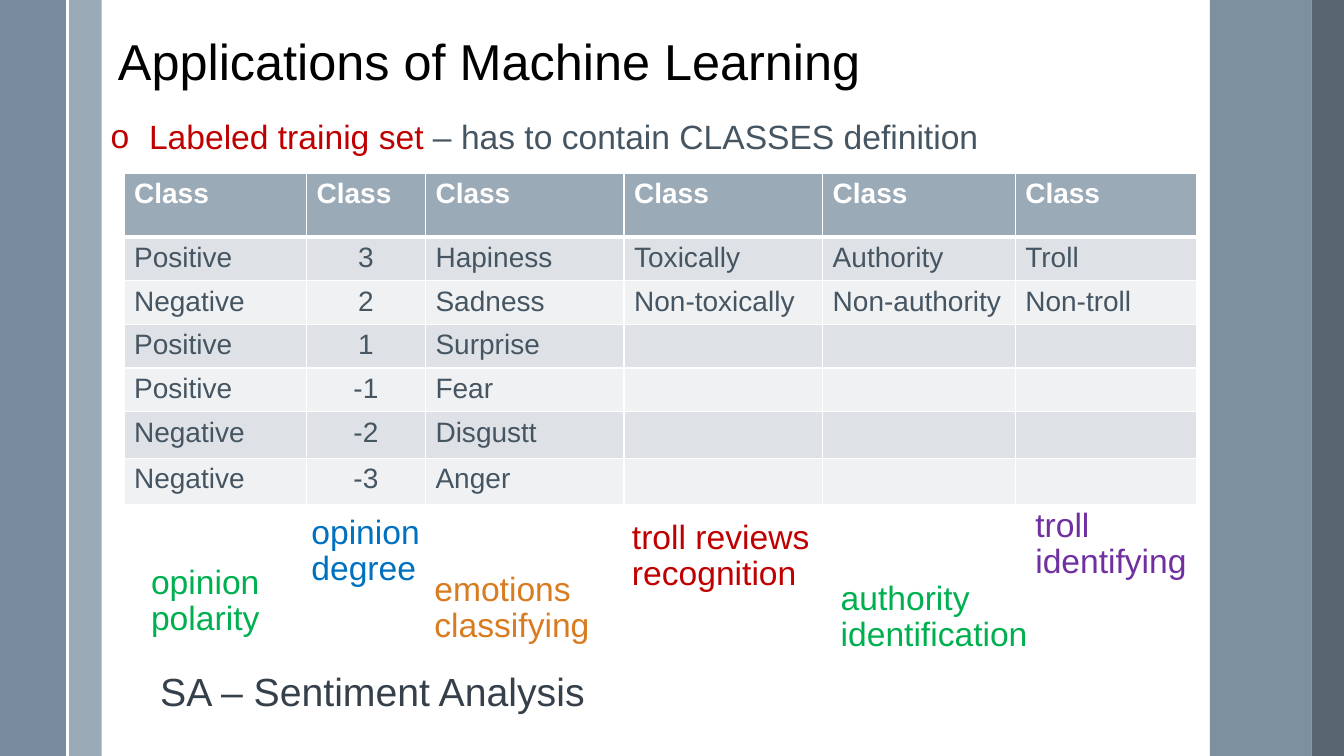
from lxml.etree import SubElement
from pptx import Presentation
from pptx.dml.color import RGBColor
from pptx.enum.shapes import MSO_CONNECTOR, MSO_SHAPE
from pptx.enum.text import MSO_ANCHOR, MSO_AUTO_SIZE, PP_ALIGN
from pptx.oxml.ns import qn
from pptx.util import Inches, Pt

COLORS = {
    "white": "FFFFFF", "black": "000000", "slate": "465562", "dark": "35404A",
    "pale": "9BAAB7", "steel": "6A8093", "edge": "475562",
    "odd": "DEE2E6", "even": "EFF1F3",
    "red": "C00000", "green": "00B050", "blue": "0070C0",
    "orange": "D97B20", "purple": "7030A0",
}

# Left, width, colour, opacity in percent
BANDS = [
    (0.68, 0.33, "pale", 100),
    (0, 0.67, "steel", 90),
    (12, 1.01, "steel", 87),
    (13.01, 0.33, "edge", 90),
]

COLS = [1.81, 1.18, 1.97, 1.97, 1.91, 1.8]
HEIGHTS = [0.63, 0.42, 0.42, 0.42, 0.42, 0.46, 0.46]
ROWS = [
    ["Class"] * 6,
    ["Positive", "3", "Hapiness", "Toxically", "Authority", "Troll"],
    ["Negative", "2", "Sadness", "Non-toxically", "Non-authority", "Non-troll"],
    ["Positive", "1", "Surprise", "", "", ""],
    ["Positive", "-1", "Fear", "", "", ""],
    ["Negative", "-2", "Disgustt", "", "", ""],
    ["Negative", "-3", "Anger", "", "", ""],
]

# Text, size, colour, box
LABELS = [
    ("opinion polarity", 24, "green", (1.4, 5.56, 1.42, 1.02)),
    ("opinion degree", 24, "blue", (2.99, 5.06, 1.42, 1.02)),
    ("emotions classifying", 24, "orange", (4.21, 5.63, 1.89, 1.02)),
    ("troll reviews recognition", 24, "red", (6.17, 5.11, 2.06, 1.02)),
    ("authority identification", 24, "green", (8.24, 5.72, 2.16, 1.02)),
    ("troll identifying", 24, "purple", (10.17, 4.99, 2.19, 1.02)),
    ("SA – Sentiment Analysis", 28, "dark", (1.49, 6.62, 4.62, 0.63)),
]


def color(name):
    return RGBColor.from_string(COLORS[name])


def style(run, size, name, bold=False):
    font = run.font
    font.name, font.size, font.bold = "Arial", Pt(size), bold
    font.color.rgb = color(name)


def add_bands(slide, height):
    for left, width, name, alpha in BANDS:
        band = slide.shapes.add_shape(
            MSO_SHAPE.RECTANGLE, Inches(left), 0, Inches(width), Inches(height))
        band.shadow.inherit = False
        band.fill.solid()
        band.fill.fore_color.rgb = color(name)
        band.line.fill.background()
        if alpha < 100:
            tint = band.fill._xPr.find(".//" + qn("a:srgbClr"))
            SubElement(tint, qn("a:alpha"), val=str(alpha * 1000))
    # Thin rule between the left bands
    x = Inches(0.67)
    rule = slide.shapes.add_connector(MSO_CONNECTOR.STRAIGHT, x, 0, x, Inches(height))
    rule.line.color.rgb = color("white")
    rule.line.width = Pt(1.5)
    SubElement(rule._element.spPr, qn("a:effectLst"))


def add_title(slide, box, text):
    title = slide.shapes.title
    title.left, title.top, title.width, title.height = map(Inches, box)
    frame = title.text_frame
    frame.text = text
    frame.auto_size = MSO_AUTO_SIZE.NONE
    frame.vertical_anchor = MSO_ANCHOR.MIDDLE
    para = frame.paragraphs[0]
    para.alignment = PP_ALIGN.LEFT
    para.line_spacing = 0.9
    style(para.runs[0], 36, "black")


def add_text(slide, box, parts, size):
    frame = slide.shapes.add_textbox(*map(Inches, box)).text_frame
    frame.word_wrap = True
    para = frame.paragraphs[0]
    para.line_spacing = 0.9
    for text, name in parts:
        run = para.add_run()
        run.text = text
        style(run, size, name)
    return para


def add_bullet(slide, box, parts):
    para = add_text(slide, box, parts, 24)
    props = para._p.get_or_add_pPr()
    props.set("marL", str(Inches(0.38)))
    props.set("indent", str(-Inches(0.38)))
    SubElement(props, qn("a:buFont"), typeface="Arial")
    SubElement(props, qn("a:buChar"), char="o")


def add_borders(cell, head):
    props = cell._tc.get_or_add_tcPr()
    for side in "LRTB":
        width = 3 if head and side == "B" else 1
        line = SubElement(props, qn("a:ln" + side), w=str(Pt(width)))
        fill = SubElement(line, qn("a:solidFill"))
        SubElement(fill, qn("a:srgbClr"), val=COLORS["white"])


def add_grid(slide, box):
    table = slide.shapes.add_table(len(ROWS), len(COLS), *map(Inches, box)).table
    for col, width in zip(table.columns, COLS):
        col.width = Inches(width)
    for r, texts in enumerate(ROWS):
        table.rows[r].height = Inches(HEIGHTS[r])
        head = r == 0
        shade = "pale" if head else "odd" if r % 2 else "even"
        for c, text in enumerate(texts):
            cell = table.cell(r, c)
            add_borders(cell, head)
            cell.fill.solid()
            cell.fill.fore_color.rgb = color(shade)
            cell.text = text
            para = cell.text_frame.paragraphs[0]
            if c == 1 and not head:
                para.alignment = PP_ALIGN.CENTER
            for run in para.runs:
                style(run, 20, "white" if head else "slate", head)


def main():
    deck = Presentation()
    deck.slide_width, deck.slide_height = Inches(13.33), Inches(7.5)
    slide = deck.slides.add_slide(deck.slide_layouts[5])
    add_bands(slide, 7.5)
    add_title(slide, (1.07, -0.04, 10.7, 1.36), "Applications of Machine Learning")
    add_bullet(slide, (1, 1.15, 10.7, 0.55), [
        ("Labeled trainig set ", "red"),
        ("– has to contain CLASSES definition", "slate"),
    ])
    add_grid(slide, (1.23, 1.72, 10.63, 3.27))
    for text, size, name, box in LABELS:
        add_text(slide, box, [(text, name)], size)
    deck.save("out.pptx")


if __name__ == "__main__":
    main()
